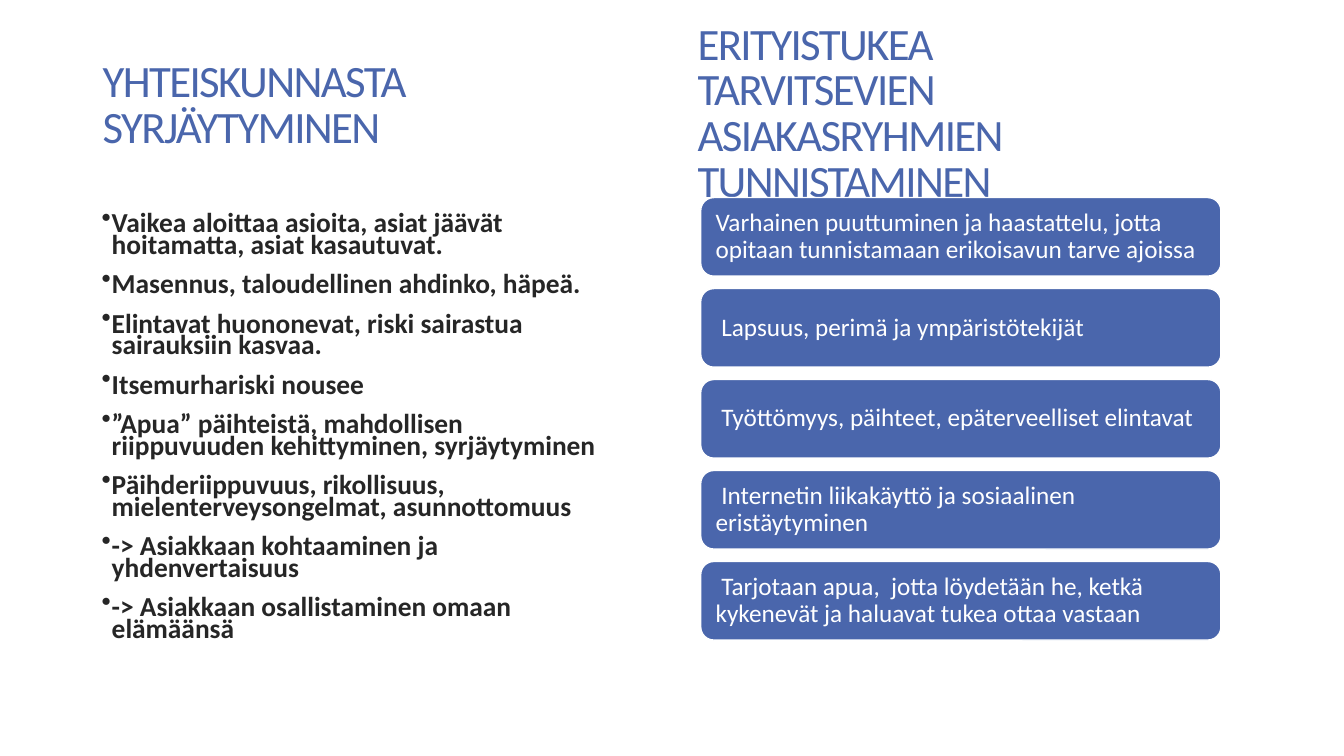
from lxml.etree import SubElement
from pptx import Presentation
from pptx.dml.color import RGBColor
from pptx.enum.shapes import MSO_SHAPE
from pptx.enum.text import MSO_ANCHOR, PP_ALIGN
from pptx.oxml.ns import qn
from pptx.util import Inches, Pt

COLORS = {"blue": "4A66AC", "white": "FFFFFF", "dark": "262626"}

SIGNS = [
    "Vaikea aloittaa asioita, asiat jäävät hoitamatta, asiat kasautuvat.",
    "Masennus, taloudellinen ahdinko, häpeä.",
    "Elintavat huononevat, riski sairastua sairauksiin kasvaa.",
    "Itsemurhariski nousee",
    "”Apua” päihteistä, mahdollisen riippuvuuden kehittyminen, syrjäytyminen",
    "Päihderiippuvuus, rikollisuus, mielenterveysongelmat, asunnottomuus",
    "-> Asiakkaan kohtaaminen ja yhdenvertaisuus",
    "-> Asiakkaan osallistaminen omaan elämäänsä",
]
CARDS = [
    "Varhainen puuttuminen ja haastattelu, jotta opitaan tunnistamaan erikoisavun tarve ajoissa ",
    " Lapsuus, perimä ja ympäristötekijät ",
    " Työttömyys, päihteet, epäterveelliset elintavat",
    " Internetin liikakäyttö ja sosiaalinen eristäytyminen",
    " Tarjotaan apua,  jotta löydetään he, ketkä kykenevät ja haluavat tukea ottaa vastaan",
]


def color(name):
    return RGBColor.from_string(COLORS[name])


def style(para, size, tint, lead, bold=False):
    """Format the runs and line spacing of one paragraph."""
    para.alignment = PP_ALIGN.LEFT
    para.line_spacing = lead
    for run in para.runs:
        font = run.font
        font.name, font.size, font.bold = "Calibri", Pt(size), bold
        font.color.rgb = color(tint)


def add_frame(slide, box):
    """Add a wrapping text box and return its text frame."""
    frame = slide.shapes.add_textbox(*map(Inches, box)).text_frame
    frame.word_wrap = True
    return frame


def add_title(slide, box, text):
    frame = add_frame(slide, box)
    frame.vertical_anchor = MSO_ANCHOR.MIDDLE
    frame.text = text
    para = frame.paragraphs[0]
    style(para, 32, "blue", 0.85)
    para.runs[0].font._element.set("spc", "-120")


def add_list(slide, box, items):
    frame = add_frame(slide, box)
    frame.text = "\n".join(items)
    for para in frame.paragraphs:
        style(para, 19.6, "dark", 0.65, bold=True)
        para.space_before = Pt(13)
        props = para._p.get_or_add_pPr()
        props.set("marL", str(Inches(0.1)))
        props.set("indent", str(Inches(-0.1)))
        SubElement(props, qn("a:buChar")).set("char", "•")


def add_cards(slide, box, items, tall=0.78):
    """Stack one rounded card per item, spread evenly over the box."""
    left, top, width, height = box
    step = (height - tall) / (len(items) - 1)
    for row, text in enumerate(items):
        place = left, top + row * step, width, tall
        card = slide.shapes.add_shape(
            MSO_SHAPE.ROUNDED_RECTANGLE, *map(Inches, place))
        card.shadow.inherit = False
        card.fill.solid()
        card.fill.fore_color.rgb = color("blue")
        card.line.color.rgb = color("white")
        card.line.width = Pt(1)
        frame = card.text_frame
        frame.word_wrap = True
        frame.vertical_anchor = MSO_ANCHOR.MIDDLE
        frame.margin_left = frame.margin_right = Inches(0.11)
        frame.text = text
        style(frame.paragraphs[0], 18, "white", 0.9)


def main():
    deck = Presentation()
    deck.slide_width, deck.slide_height = Inches(13.33), Inches(7.5)
    slide = deck.slides.add_slide(deck.slide_layouts[6])
    add_title(slide, (0.92, 0.09, 4.71, 1.94), "YHTEISKUNNASTA SYRJÄYTYMINEN")
    add_title(slide, (6.82, 0.17, 4.71, 1.94),
              "ERITYISTUKEA TARVITSEVIEN ASIAKASRYHMIEN TUNNISTAMINEN")
    add_list(slide, (0.91, 2.09, 5.11, 4.57), SIGNS)
    add_cards(slide, (6.95, 1.96, 5.16, 4.39), CARDS)
    deck.save("out.pptx")


if __name__ == "__main__":
    main()
